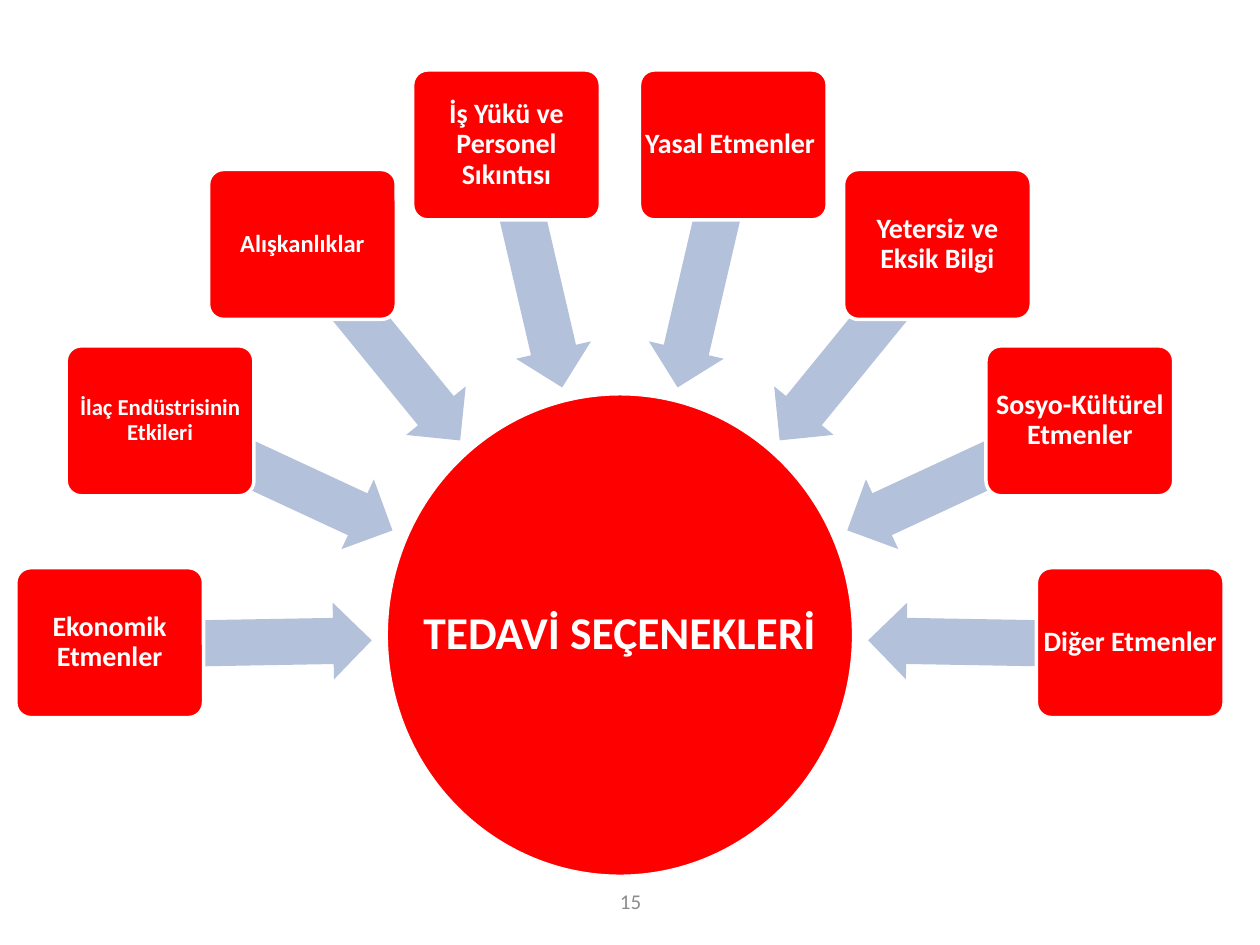
from pptx import Presentation
from pptx.dml.color import RGBColor
from pptx.enum.shapes import MSO_SHAPE
from pptx.enum.text import MSO_ANCHOR, PP_ALIGN
from pptx.util import Inches, Pt

CIRCLE = MSO_SHAPE.OVAL
CARD = MSO_SHAPE.ROUNDED_RECTANGLE
ARROW = MSO_SHAPE.LEFT_ARROW
CENTER = PP_ALIGN.CENTER
MIDDLE = MSO_ANCHOR.MIDDLE

RED = RGBColor(0xFF, 0x00, 0x00)
WHITE = RGBColor(0xFF, 0xFF, 0xFF)
PALE_BLUE = RGBColor(0xB3, 0xC1, 0xDB)
GRAY = RGBColor(0x8C, 0x8C, 0x8C)

AXIS = 4.92  # vertical line that the fan of cards mirrors across
CARD_W, CARD_H = 1.49, 1.19
ARROW_H = 0.61

prs = Presentation()
prs.slide_width, prs.slide_height = Inches(10), Inches(7.5)
slide = prs.slides.add_slide(prs.slide_layouts[6])


def write(shape, text, size, color=WHITE, bold=True, wrap=True, spacing=0.9):
    frame = shape.text_frame
    frame.word_wrap = wrap
    frame.vertical_anchor = MIDDLE
    frame.margin_left = frame.margin_right = 0
    frame.margin_top = frame.margin_bottom = 0
    paragraph = frame.paragraphs[0]
    paragraph.alignment = CENTER
    paragraph.line_spacing = spacing
    run = paragraph.add_run()
    run.text = text
    run.font.name = "Calibri"
    run.font.size = Pt(size)
    run.font.bold = bold
    run.font.color.rgb = color


def add_block(kind, center_x, center_y, width, height, fill, outlined=True):
    block = slide.shapes.add_shape(
        kind, Inches(center_x - width / 2), Inches(center_y - height / 2),
        Inches(width), Inches(height))
    block.shadow.inherit = False
    block.fill.solid()
    block.fill.fore_color.rgb = fill
    if outlined:
        block.line.color.rgb = WHITE
        block.line.width = Pt(2)
    else:
        block.line.fill.background()
    return block


# Central circle
treatment = add_block(CIRCLE, AXIS, 5.04, 3.71, 3.83, RED)
write(treatment, "TEDAVİ SEÇENEKLERİ", 26, wrap=False)

# Each tier holds a left and a right factor (text, size), then the distance
# from the axis and the height of the card and of the arrow centres,
# the arrow length and the angle of the right arrow
tiers = [
    (("Ekonomik Etmenler", 16), ("Diğer Etmenler", 16),
     4.05, 5.1, 3.01, 5.1, 2.08, 1),
    (("İlaç Endüstrisinin Etkileri", 13), ("Sosyo-Kültürel Etmenler", 16),
     3.65, 3.34, 2.73, 3.78, 2.04, 335.1),
    (("Alışkanlıklar", 14), ("Yetersiz ve Eksik Bilgi", 16),
     2.52, 1.94, 1.9, 2.72, 2, 309.2),
    (("İş Yükü ve Personel Sıkıntısı", 16), ("Yasal Etmenler ", 16),
     0.9, 1.15, 0.68, 2.12, 1.96, 283.1),
]

# Arrows and factor cards, mirrored left and right
for left, right, card_dx, card_y, arrow_dx, arrow_y, length, angle in tiers:
    for side, (factor, size) in ((-1, left), (1, right)):
        arrow = add_block(ARROW, AXIS + side * arrow_dx, arrow_y,
                          length, ARROW_H, PALE_BLUE, outlined=False)
        arrow.adjustments[0] = 0.6
        arrow.adjustments[1] = 0.5
        arrow.rotation = angle if side == 1 else (540 - angle) % 360

        card = add_block(CARD, AXIS + side * card_dx, card_y,
                         CARD_W, CARD_H, RED)
        card.adjustments[0] = 0.1
        write(card, factor, size)

# Slide number
page_number = slide.shapes.add_textbox(
    Inches(3.42), Inches(6.95), Inches(3.17), Inches(0.4))
write(page_number, "15", 12, color=GRAY, bold=False, spacing=1.0)

prs.save("out.pptx")
